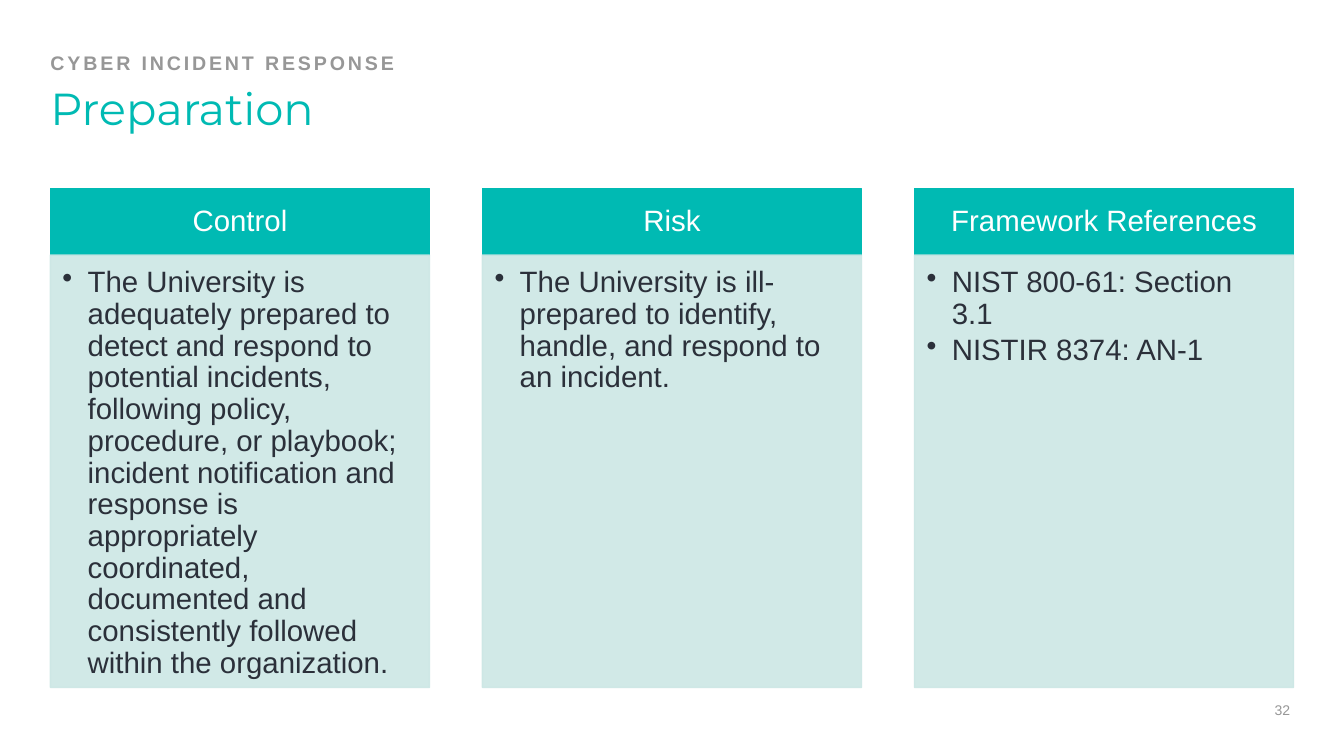
from lxml.etree import SubElement
from pptx import Presentation
from pptx.dml.color import RGBColor
from pptx.enum.shapes import MSO_SHAPE as Shape
from pptx.enum.text import MSO_ANCHOR as Anchor, MSO_AUTO_SIZE as AutoSize, PP_ALIGN as Align
from pptx.oxml.ns import qn
from pptx.util import Inches, Pt

TEAL = RGBColor(0x00, 0xBA, 0xB3)
PALE_TEAL = RGBColor(0xCC, 0xE7, 0xE5)
INK = RGBColor(0x2B, 0x30, 0x3A)
GREY = RGBColor(0x97, 0x97, 0x97)
WHITE = RGBColor(0xFF, 0xFF, 0xFF)

SLIDE_W, SLIDE_H = 13.33, 7.5
MARGIN = 0.5
CONTENT_W = SLIDE_W - 2 * MARGIN
COLUMN_W = 3.76
HEADER_TOP, HEADER_H, DETAIL_H = 1.87, 0.66, 4.29

COLUMNS = [
    ("Control", [
        "The University is adequately prepared to detect and respond to potential "
        "incidents, following policy, procedure, or playbook; incident notification "
        "and response is appropriately coordinated, documented and consistently "
        "followed within the organization."]),
    ("Risk", [
        "The University is ill-prepared to identify, handle, and respond to an incident."]),
    ("Framework References", ["NIST 800-61: Section 3.1", "NISTIR 8374: AN-1"]),
]
PITCH = (CONTENT_W - COLUMN_W) / (len(COLUMNS) - 1)


def write(holder, lines, size, color, insets, anchor=Anchor.TOP, align=Align.LEFT,
          font="Arial", bold=False, after=0, bullet=False):
    frame = holder.text_frame
    frame.text = "\n".join(lines)
    frame.word_wrap = True
    frame.auto_size = AutoSize.NONE
    frame.vertical_anchor = anchor
    (frame.margin_left, frame.margin_top,
     frame.margin_right, frame.margin_bottom) = [Inches(inset) for inset in insets]
    for paragraph in frame.paragraphs:
        paragraph.alignment = align
        paragraph.line_spacing = 0.9
        paragraph.space_before = Pt(0)
        paragraph.space_after = Pt(after)
        properties = paragraph._p.get_or_add_pPr()
        indent = Inches(0.25) if bullet else 0
        properties.set("marL", str(indent))
        properties.set("indent", str(-indent))
        if bullet:
            SubElement(properties, qn("a:buChar")).set("char", "•")
        else:
            SubElement(properties, qn("a:buNone"))
        for run in paragraph.runs:
            run.font.name = font
            run.font.size = Pt(size)
            run.font.bold = bold
            run.font.color.rgb = color


def add_panel(left, top, height, color, opacity):
    panel = slide.shapes.add_shape(
        Shape.RECTANGLE, Inches(left), Inches(top), Inches(COLUMN_W), Inches(height))
    panel.shadow.inherit = False
    panel.fill.solid()
    panel.fill.fore_color.rgb = color
    panel.line.color.rgb = color
    panel.line.width = Pt(1)
    if opacity < 100:
        for tint in panel._element.spPr.iter(qn("a:srgbClr")):
            SubElement(tint, qn("a:alpha")).set("val", str(opacity * 1000))
    return panel


deck = Presentation()
deck.slide_width, deck.slide_height = Inches(SLIDE_W), Inches(SLIDE_H)
slide = deck.slides.add_slide(deck.slide_layouts[1])

title = slide.shapes.title
kicker = slide.placeholders[1]
for heading, top, height in [(title, 0.76, 0.59), (kicker, 0.53, 0.21)]:
    heading.left, heading.top = Inches(MARGIN), Inches(top)
    heading.width, heading.height = Inches(CONTENT_W), Inches(height)

write(title, ["Preparation"], 32, TEAL, (0, 0.1, 0, 0), font="Montserrat")
write(kicker, ["CYBER INCIDENT RESPONSE"], 14, GREY, (0, 0, 0, 0),
      anchor=Anchor.BOTTOM, bold=True)
kicker.text_frame.paragraphs[0].runs[0].font._element.set("spc", "200")

for index, (topic, points) in enumerate(COLUMNS):
    left = MARGIN + index * PITCH
    header = add_panel(left, HEADER_TOP, HEADER_H, TEAL, 100)
    write(header, [topic], 21, WHITE, (0.16, 0.09, 0.16, 0.09),
          anchor=Anchor.MIDDLE, align=Align.CENTER)
    detail = add_panel(left, HEADER_TOP + HEADER_H, DETAIL_H, PALE_TEAL, 90)
    write(detail, points, 21, INK, (0.12, 0.12, 0.16, 0.18), after=3.5, bullet=True)

page_number = slide.shapes.add_textbox(Inches(12.52), Inches(6.97), Inches(0.4), Inches(0.17))
write(page_number, ["32"], 10, GREY, (0, 0, 0, 0), anchor=Anchor.MIDDLE, align=Align.CENTER)

deck.save("out.pptx")
